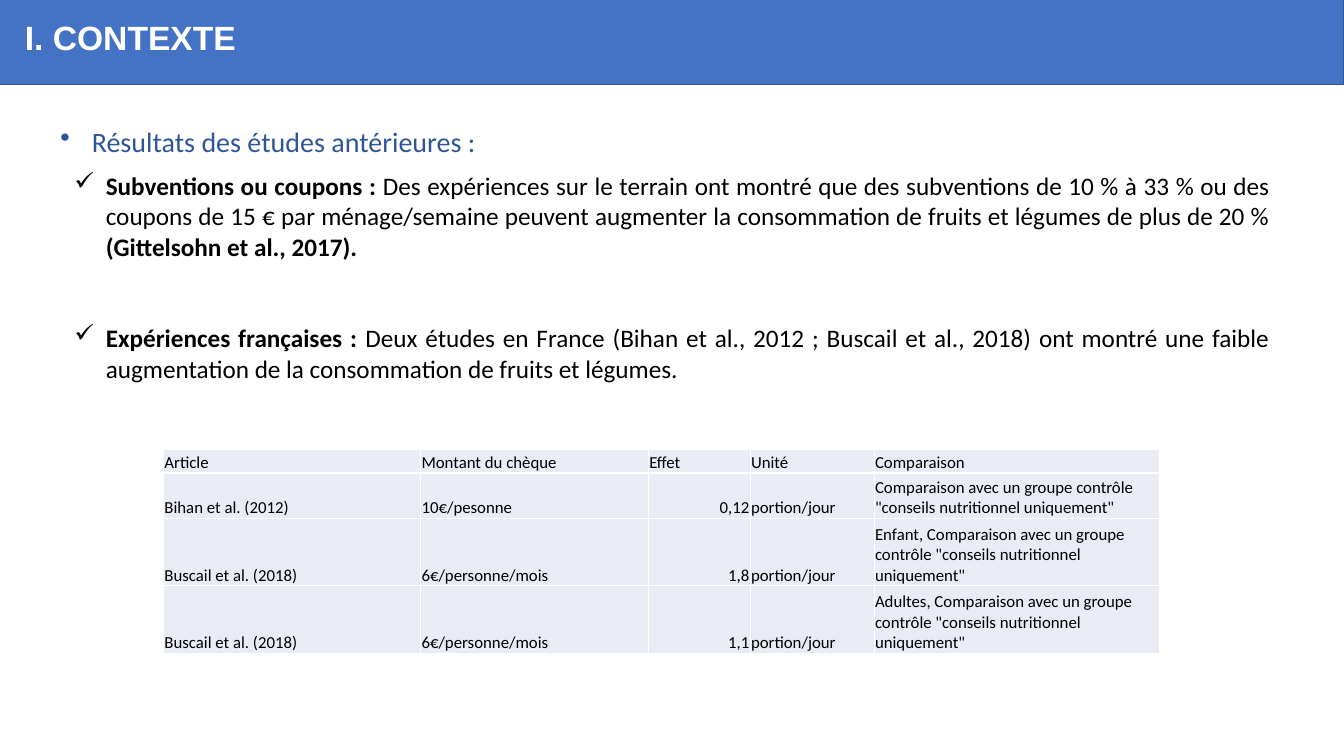
from dataclasses import dataclass

from lxml import etree
from pptx import Presentation
from pptx.dml.color import RGBColor as RGB
from pptx.enum.shapes import MSO_SHAPE as Shape
from pptx.enum.text import MSO_ANCHOR as Anchor
from pptx.enum.text import MSO_AUTO_SIZE as AutoSize
from pptx.enum.text import PP_ALIGN as Align
from pptx.oxml.ns import qn
from pptx.util import Pt

COLORS = {
    "banner": "4472C4",
    "banner_line": "325491",
    "heading": "2F5597",
    "text": "000000",
    "white": "FFFFFF",
    "cell": "E9EBF5",
}


@dataclass
class Box:
    left: float
    top: float
    width: float
    height: float

    def lengths(self) -> list:
        return [Pt(v) for v in (self.left, self.top, self.width, self.height)]


@dataclass
class Finding:
    phrases: list  # (text, bold) pairs
    space_before: float = 0


FINDINGS = [
    Finding([
        ("Subventions ou coupons : ", True),
        ("Des expériences sur le terrain ont montré que des subventions de 10 % à 33 % "
         "ou des coupons de 15 € par ménage/semaine peuvent augmenter la consommation "
         "de fruits et légumes de plus de 20 %", False),
        (" (Gittelsohn et al., 2017).", True),
    ]),
    Finding([
        ("Expériences françaises :", True),
        (" Deux études en France (Bihan et al., 2012 ; Buscail et al., 2018) ont montré "
         "une faible augmentation de la consommation de fruits et légumes.", False),
    ], space_before=44),
]

CONTROL = 'Comparaison avec un groupe contrôle "conseils nutritionnel uniquement"'
STUDIES = [
    ["Article", "Montant du chèque", "Effet", "Unité", "Comparaison"],
    ["Bihan et al. (2012)", "10€/pesonne", "0,12", "portion/jour", CONTROL],
    ["Buscail et al. (2018)", "6€/personne/mois", "1,8", "portion/jour", f"Enfant, {CONTROL}"],
    ["Buscail et al. (2018)", "6€/personne/mois", "1,1", "portion/jour", f"Adultes, {CONTROL}"],
]
EFFECT_COL = 2
COL_WIDTHS = [183.6, 162.7, 72.7, 88.6, 203.8]
ROW_HEIGHTS = [16.5, 32.4, 48.2, 48.2]


def style(r, size: float, color: str, bold: bool = False, name: str = "Calibri") -> None:
    r.font.size = Pt(size)
    r.font.name = name
    r.font.bold = bold
    r.font.color.rgb = RGB.from_string(COLORS[color])


def add_bullet(p, char: str, margin: float, hanging: float) -> None:
    pPr = p._p.get_or_add_pPr()
    pPr.set("marL", str(Pt(margin)))
    pPr.set("indent", str(-Pt(hanging)))
    etree.SubElement(pPr, qn("a:buChar")).set("char", char)


def add_text_frame(slide, box: Box):
    tf = slide.shapes.add_textbox(*box.lengths()).text_frame
    tf.word_wrap = True
    return tf


def add_borders(cell, color: str, width: float) -> None:
    tcPr = cell._tc.get_or_add_tcPr()
    for i, side in enumerate(("lnL", "lnR", "lnT", "lnB")):
        ln = etree.Element(qn(f"a:{side}"), w=str(Pt(width)))
        fill = etree.SubElement(ln, qn("a:solidFill"))
        etree.SubElement(fill, qn("a:srgbClr")).set("val", COLORS[color])
        tcPr.insert(i, ln)


def add_banner(slide, box: Box) -> None:
    sp = slide.shapes.add_shape(Shape.RECTANGLE, *box.lengths())
    sp.shadow.inherit = False
    sp.fill.solid()
    sp.fill.fore_color.rgb = RGB.from_string(COLORS["banner"])
    sp.line.color.rgb = RGB.from_string(COLORS["banner_line"])
    sp.line.width = Pt(1)


def set_title(slide, text: str, box: Box) -> None:
    sp = slide.shapes.title
    sp.left, sp.top, sp.width, sp.height = box.lengths()
    tf = sp.text_frame
    tf.text = text
    tf.auto_size = AutoSize.NONE
    tf.vertical_anchor = Anchor.TOP
    p = tf.paragraphs[0]
    p.alignment = Align.LEFT
    style(p.runs[0], 24, "white", bold=True, name="Arial")
    # Bring the title in front of the banner
    sp.element.getparent().append(sp.element)


def add_heading(slide, text: str, box: Box) -> None:
    p = add_text_frame(slide, box).paragraphs[0]
    p.text = text
    p.level = 1
    p.line_spacing = 1.5
    add_bullet(p, "•", 58.5, 22.5)
    style(p.runs[0], 20, "heading")


def add_findings(slide, findings: list[Finding], box: Box) -> None:
    tf = add_text_frame(slide, box)
    tf.margin_top = Pt(47.5)
    for i, finding in enumerate(findings):
        p = tf.add_paragraph() if i else tf.paragraphs[0]
        p.alignment = Align.JUSTIFY
        p.space_before = Pt(finding.space_before)
        add_bullet(p, "✓", 22.5, 22.5)
        for text, bold in finding.phrases:
            r = p.add_run()
            r.text = text
            style(r, 18, "text", bold)


def add_studies(slide, rows: list[list[str]], box: Box) -> None:
    table = slide.shapes.add_table(len(rows), len(rows[0]), *box.lengths()).table
    table.first_row = table.horz_banding = False
    for col, width in zip(table.columns, COL_WIDTHS):
        col.width = Pt(width)
    for row, height, texts in zip(table.rows, ROW_HEIGHTS, rows):
        row.height = Pt(height)
        for j, (cell, text) in enumerate(zip(row.cells, texts)):
            cell.text = text
            cell.vertical_anchor = Anchor.BOTTOM
            cell.margin_left = cell.margin_right = cell.margin_top = Pt(0.6)
            cell.margin_bottom = Pt(0)
            cell.fill.solid()
            cell.fill.fore_color.rgb = RGB.from_string(COLORS["cell"])
            add_borders(cell, "white", 1)
            p = cell.text_frame.paragraphs[0]
            if j == EFFECT_COL and texts is not rows[0]:
                p.alignment = Align.RIGHT
            style(p.runs[0], 12, "text")


def main() -> None:
    prs = Presentation()
    prs.slide_width, prs.slide_height = Pt(960), Pt(540)
    slide = prs.slides.add_slide(prs.slide_layouts[5])

    # Heading and banner
    add_heading(slide, "Résultats des études antérieures :", Box(0, 73.4, 869, 62.6))
    add_banner(slide, Box(-0.5, -2, 960, 62.5))
    # Findings and table of studies
    add_findings(slide, FINDINGS, Box(46, 74.2, 868.3, 298.8))
    add_studies(slide, STUDIES, Box(116.9, 321.3, sum(COL_WIDTHS), sum(ROW_HEIGHTS)))
    # Title on the banner
    set_title(slide, "I. CONTEXTE", Box(10.6, 8.8, 828, 36))

    prs.save("out.pptx")


if __name__ == "__main__":
    main()
